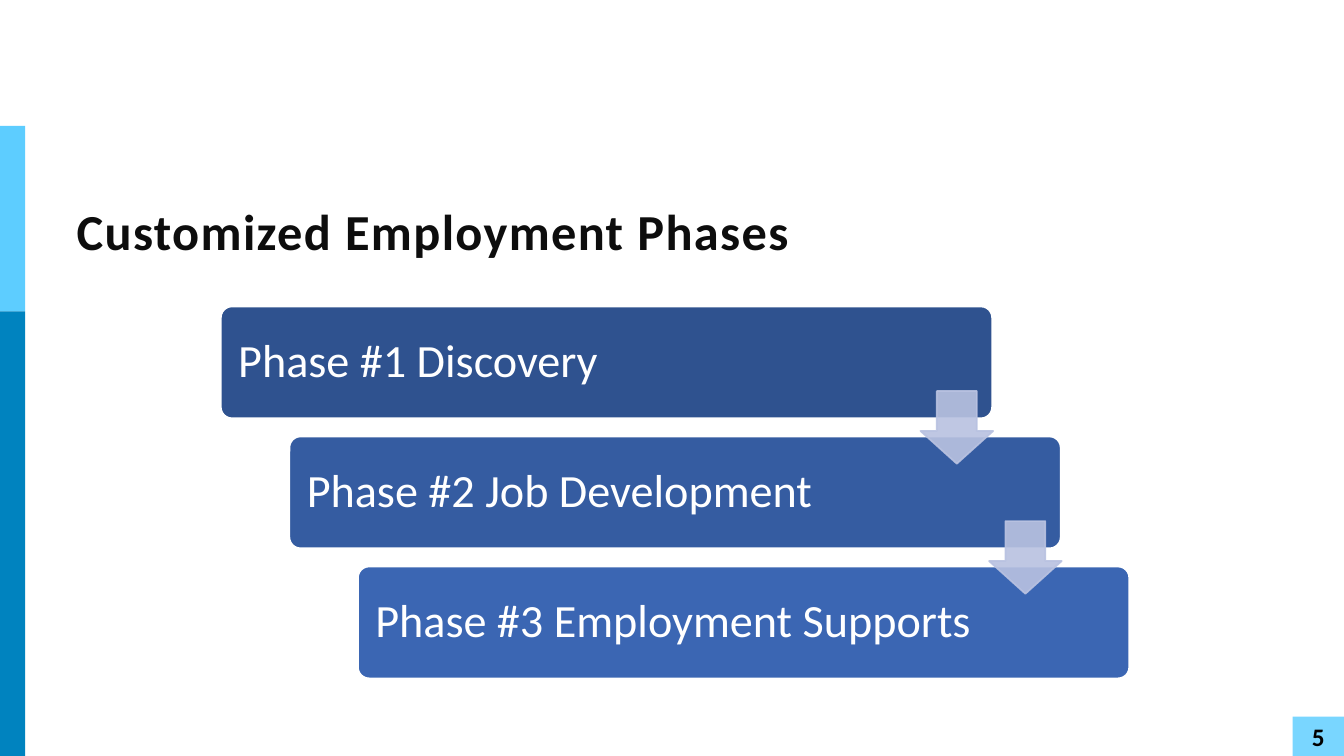
from lxml.etree import SubElement as Sub
from pptx import Presentation
from pptx.dml.color import RGBColor as RGB
from pptx.enum.shapes import MSO_SHAPE as Shape
from pptx.enum.text import MSO_ANCHOR as Anchor, PP_ALIGN as Align
from pptx.oxml.ns import qn
from pptx.util import Inches, Pt

WHITE = RGB(0xFF, 0xFF, 0xFF)
BLACK = RGB(0, 0, 0)
INK = RGB(0x0D, 0x0D, 0x0D)
SKY = RGB(0x5D, 0xCD, 0xFF)
OCEAN = RGB(0x00, 0x83, 0xBF)
PALE = RGB(0x79, 0xD6, 0xFF)
LILAC = RGB(0xB9, 0xC2, 0xE1)
NAVY = RGB(0x2F, 0x52, 0x8F)
COBALT = RGB(0x35, 0x5C, 0xA1)
ROYAL = RGB(0x3B, 0x66, 0xB3)

PHASES = [
    ("Phase #1 Discovery", NAVY),
    ("Phase #2 Job Development", COBALT),
    ("Phase #3 Employment Supports", ROYAL),
]
LEFT, TOP = 2.19, 3.04
STEP_X, STEP_Y = 0.68, 1.29


class Deck:
    font = "Calibri"
    edge = Pt(1.25)

    def __init__(self, show):
        layout = show.slide_layouts.get_by_name("Title Only")
        self.slide = show.slides.add_slide(layout)

    def label(self, shape, text, size, color, bold=False, align=Align.LEFT, space=1.0, pad=0.1):
        frame = shape.text_frame
        frame.text = text
        frame.word_wrap = True
        frame.vertical_anchor = Anchor.MIDDLE
        frame.margin_left = frame.margin_right = Inches(pad)
        para = frame.paragraphs[0]
        para.alignment = align
        para.line_spacing = space
        font = para.runs[0].font
        style = {"name": self.font, "size": Pt(size), "bold": bold}
        for key, value in style.items():
            setattr(font, key, value)
        font.color.rgb = color
        return para

    def title(self, text, x, y, w, h):
        shape = self.slide.shapes.title
        spot = {"left": x, "top": y, "width": w, "height": h}
        for key, value in spot.items():
            setattr(shape, key, Inches(value))
        para = self.label(shape, text, 36, INK, bold=True, space=0.8)
        para.runs[0].font._element.set("spc", "100")

    def block(self, kind, x, y, w, h, fill, line=None, adjust=()):
        shape = self.slide.shapes.add_shape(kind, *map(Inches, (x, y, w, h)))
        shape.shadow.inherit = False
        shape.fill.solid()
        shape.fill.fore_color.rgb = fill
        if line is None:
            shape.line.fill.background()
        else:
            shape.line.color.rgb = line
            shape.line.width = self.edge
        for spot, value in enumerate(adjust):
            shape.adjustments[spot] = value
        return shape

    def phase(self, text, x, y, fill):
        shape = self.block(Shape.ROUNDED_RECTANGLE, x, y, 7.65, 1.11, fill, WHITE, [0.1])
        self.label(shape, text, 33, WHITE, space=0.9, pad=0.14)

    def arrow(self, x, y):
        shape = self.block(Shape.DOWN_ARROW, x, y, 0.72, 0.72, LILAC, LILAC, [0.55, 0.45])
        for color in shape._element.spPr.iter(qn("a:srgbClr")):
            Sub(color, qn("a:alpha")).set("val", "90000")


def main():
    show = Presentation()
    show.slide_width, show.slide_height = Inches(13.33), Inches(7.5)
    deck = Deck(show)
    deck.block(Shape.RECTANGLE, 0, 1.25, 0.25, 1.84, SKY)
    deck.block(Shape.RECTANGLE, 0, 3.09, 0.25, 4.41, OCEAN)
    page = deck.block(Shape.RECTANGLE, 12.82, 7.11, 0.51, 0.39, PALE)
    deck.label(page, "5", 18, BLACK, bold=True, align=Align.CENTER)
    deck.title("Customized Employment Phases", 0.66, 1.72, 12.03, 1.24)

    for row, (text, fill) in enumerate(PHASES):
        deck.phase(text, LEFT + row * STEP_X, TOP + row * STEP_Y, fill)
    for row in range(len(PHASES) - 1):
        deck.arrow(9.13 + row * STEP_X, 3.88 + row * STEP_Y)
    show.save("out.pptx")


if __name__ == "__main__":
    main()
